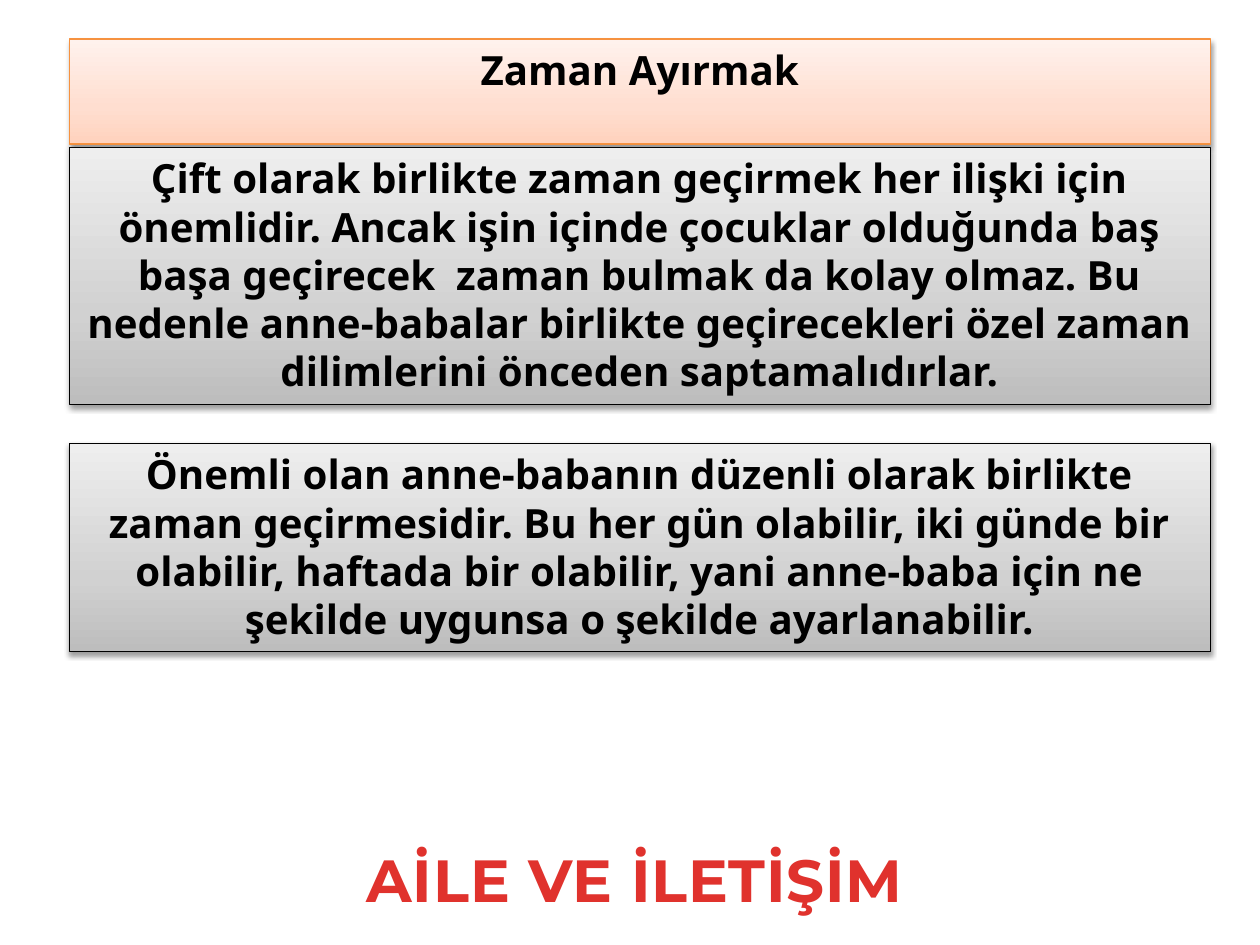
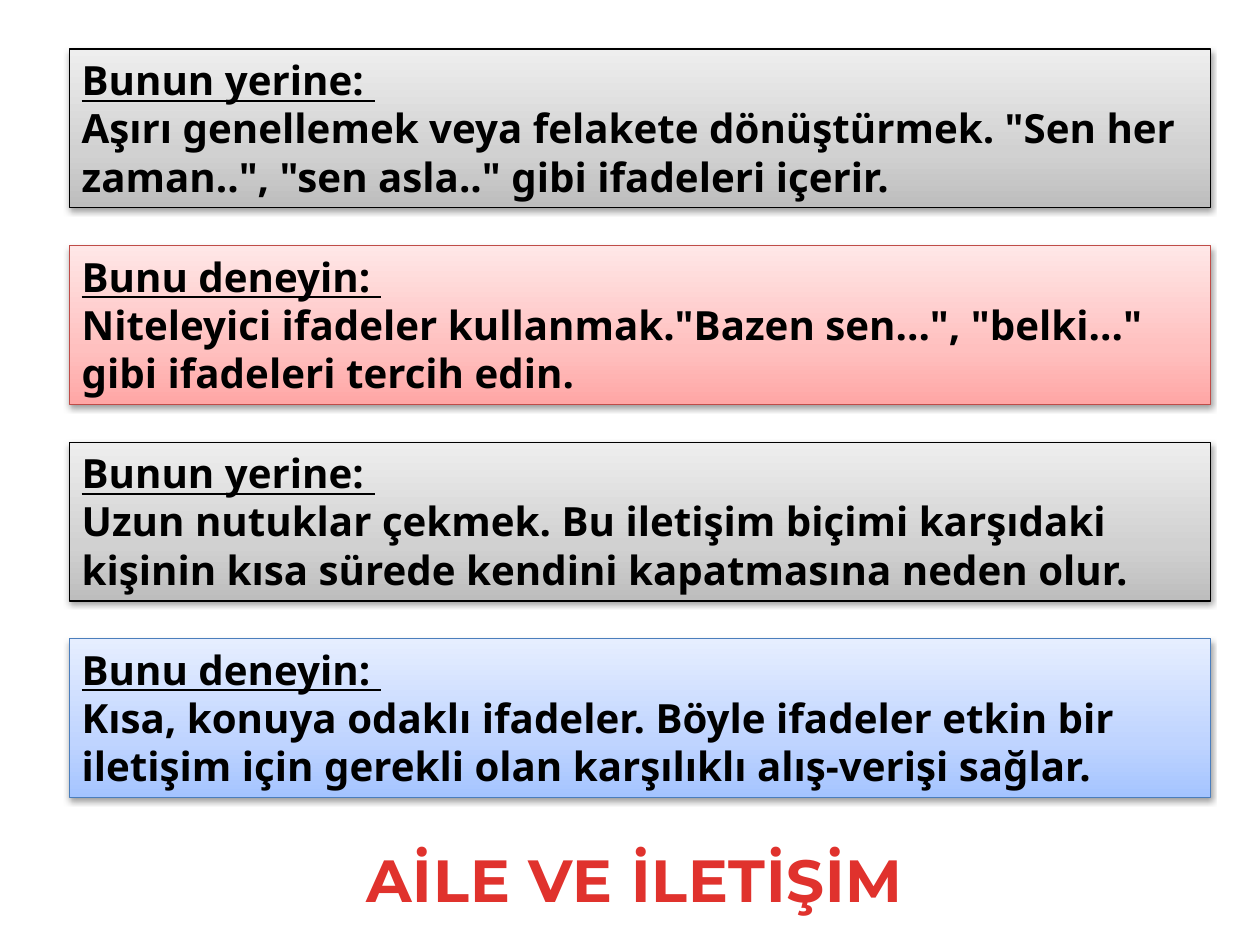
from lxml.etree import SubElement as Sub
from pptx import Presentation
from pptx.dml.color import RGBColor as RGB
from pptx.enum.shapes import MSO_SHAPE as SHAPE
from pptx.enum.text import MSO_ANCHOR as ANCHOR, MSO_AUTO_SIZE as AUTO, PP_ALIGN as ALIGN
from pptx.oxml.ns import qn
from pptx.util import Inches, Pt

# Shared look
COLORS = {"ink": "000000", "orange": "F69240", "red": "BF4C48", "blue": "4B7EBC"}
FADES = {
    "orange": ["FFD2BD", "FFDED0", "FFF2ED"],
    "ink": ["BDBDBD", "D1D1D1", "EEEEEE"],
    "red": ["FFA6A5", "FFC0BF", "FFE7E7"],
    "blue": ["A4C4FF", "BFD4FF", "E6EEFF"],
}
BRAND = ["E0322D", "A2201C"]
LEFT, WIDTH = 0.55, 9.06
TOP, STEP, HIGH = 0.39, 1.56, 1.26

# Slide content
TOPIC = "Zaman Ayırmak"
NOTES = [
    (1.17, 2.04, "Çift olarak birlikte zaman geçirmek her ilişki için önemlidir. "
     "Ancak işin içinde çocuklar olduğunda baş başa geçirecek  zaman bulmak da kolay olmaz. "
     "Bu nedenle anne-babalar birlikte geçirecekleri özel zaman dilimlerini önceden "
     "saptamalıdırlar."),
    (3.52, 1.65, "Önemli olan anne-babanın düzenli olarak birlikte zaman geçirmesidir. "
     "Bu her gün olabilir, iki günde bir olabilir, haftada bir olabilir, yani anne-baba "
     "için ne şekilde uygunsa o şekilde ayarlanabilir."),
]
AVOID, TRY = "Bunun yerine: ", "Bunu deneyin: "
TIPS = [
    ("ink", AVOID, 'Aşırı genellemek veya felakete dönüştürmek. "Sen her zaman..", '
     '"sen asla.." gibi ifadeleri içerir.'),
    ("red", TRY, 'Niteleyici ifadeler kullanmak."Bazen sen...", "belki..." '
     "gibi ifadeleri tercih edin."),
    ("ink", AVOID, "Uzun nutuklar çekmek. Bu iletişim biçimi karşıdaki kişinin kısa sürede "
     "kendini kapatmasına neden olur."),
    ("blue", TRY, "Kısa, konuya odaklı ifadeler. Böyle ifadeler etkin bir iletişim için "
     "gerekli olan karşılıklı alış-verişi sağlar."),
]
FOOTER = "AİLE VE İLETİŞİM"


def fade(fill, node, hues, spots, angle):
    """Give a fill a linear gradient with any number of stops."""
    fill.gradient()
    fill.gradient_angle = angle
    stops = node.find(".//" + qn("a:gsLst"))
    for old in list(stops):
        stops.remove(old)
    for hue, spot in zip(hues, spots):
        stop = Sub(stops, qn("a:gs"), pos=str(spot * 1000))
        Sub(stop, qn("a:srgbClr"), val=hue)


def shade(shape):
    """Drop a soft shadow straight down."""
    shape.shadow.inherit = False
    effects = shape._element.spPr.find(qn("a:effectLst"))
    drop = Sub(effects, qn("a:outerShdw"), blurRad="40000", dist="20000",
               dir="5400000", rotWithShape="0")
    ink = Sub(drop, qn("a:srgbClr"), val=COLORS["ink"])
    Sub(ink, qn("a:alpha"), val="38000")


def style(shape, tone, text, align):
    """Dress a panel or a title: gradient, outline, shadow and bold text."""
    fade(shape.fill, shape._element.spPr, FADES[tone], [0, 35, 100], 90)
    shape.line.color.rgb = RGB.from_string(COLORS[tone])
    shape.line.width = Pt(0.75)
    shade(shape)
    frame = shape.text_frame
    frame.text = text
    frame.word_wrap = True
    frame.auto_size = AUTO.SHAPE_TO_FIT_TEXT
    frame.vertical_anchor = ANCHOR.TOP
    for para in frame.paragraphs:
        para.alignment = align
        for run in para.runs:
            font = run.font
            font.name, font.size, font.bold = "Noto Sans", Pt(23), True
            font.color.rgb = RGB.from_string(COLORS["ink"])


def panel(slide, top, high, tone, text, align):
    box = slide.shapes.add_shape(SHAPE.RECTANGLE, Inches(LEFT), Inches(top),
                                 Inches(WIDTH), Inches(high))
    style(box, tone, text, align)
    return box


def title(slide, text):
    head = slide.shapes.title
    head.left, head.top = Inches(LEFT), Inches(0.31)
    head.width, head.height = Inches(WIDTH), Inches(0.49)
    style(head, "orange", text, ALIGN.CENTER)


def footer(slide):
    box = slide.shapes.add_textbox(Inches(2.58), Inches(6.64), Inches(4.92), Inches(0.67))
    frame = box.text_frame
    frame.text = FOOTER
    frame.word_wrap = True
    frame.auto_size = AUTO.SHAPE_TO_FIT_TEXT
    para = frame.paragraphs[0]
    para.alignment = ALIGN.CENTER
    run = para.runs[0]
    run.font.name, run.font.size, run.font.bold = "Montserrat", Pt(34), True
    fade(run.font.fill, run._r, BRAND, [25, 100], 270)
    run._r.get_or_add_rPr().set("spc", "50")


def main():
    deck = Presentation()
    deck.slide_width, deck.slide_height = Inches(10), Inches(7.5)

    # Making time
    slide = deck.slides.add_slide(deck.slide_layouts[5])
    title(slide, TOPIC)
    for top, high, text in NOTES:
        panel(slide, top, high, "ink", text, ALIGN.CENTER)
    footer(slide)

    # What to avoid and what to try
    slide = deck.slides.add_slide(deck.slide_layouts[6])
    for row, (tone, label, text) in enumerate(TIPS):
        box = panel(slide, TOP + row * STEP, HIGH, tone, f"{label}\n{text}", ALIGN.LEFT)
        box.text_frame.paragraphs[0].runs[0].font.underline = True
    footer(slide)

    deck.save("out.pptx")


if __name__ == "__main__":
    main()
